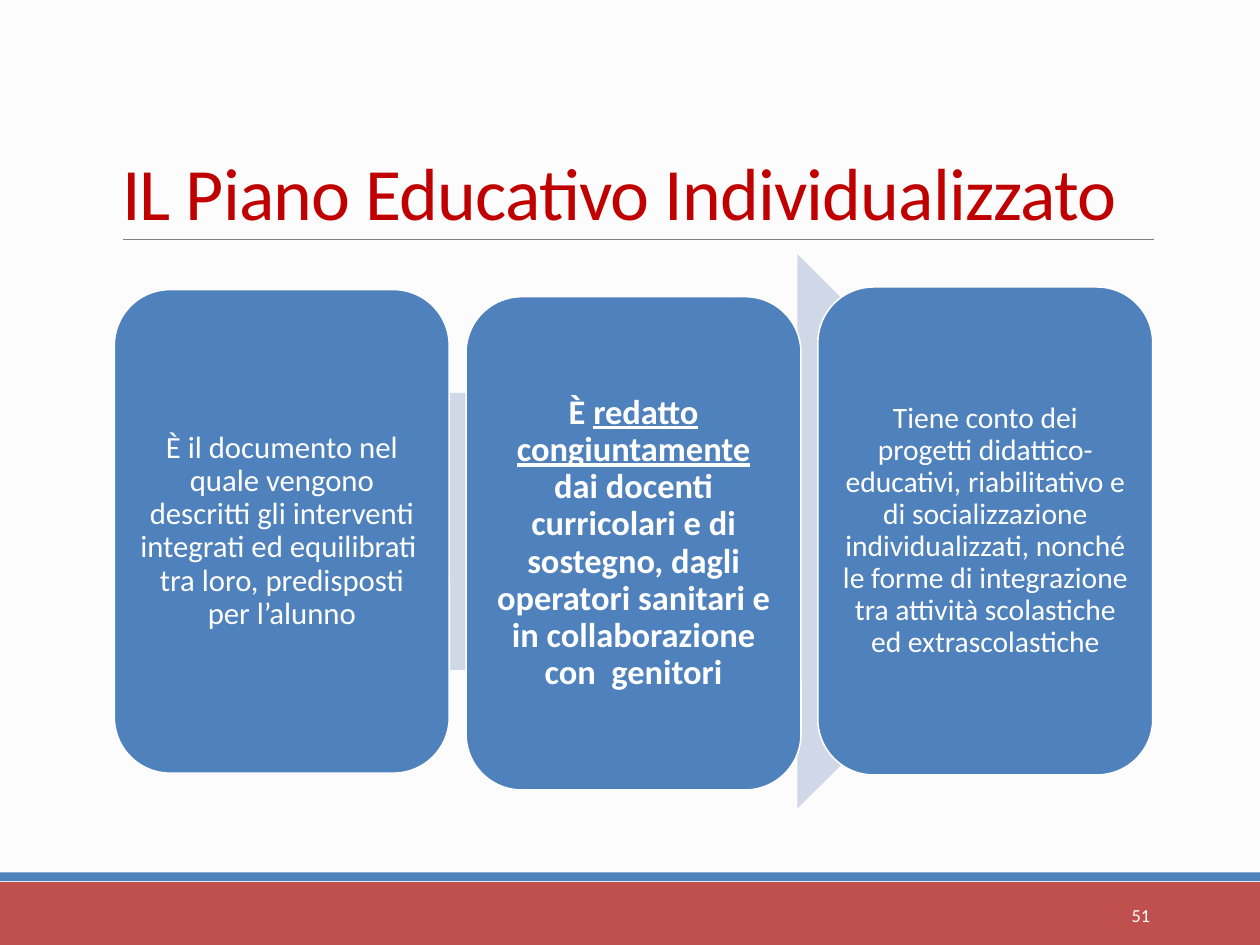
from lxml.etree import SubElement
from pptx import Presentation
from pptx.dml.color import RGBColor
from pptx.enum.shapes import MSO_CONNECTOR as Connector, MSO_SHAPE as Shape
from pptx.enum.text import MSO_ANCHOR as Anchor, PP_ALIGN as Align
from pptx.oxml.ns import qn
from pptx.util import Emu, Pt

EMU_PER_PX = 9144  # 100 px to the inch
WIDTH, HEIGHT = 1422, 1067

RED, BLUE, PALE_BLUE = "C0504D", "4F81BD", "D0D8E8"
TITLE_RED, GREY, WHITE, PAPER = "C00000", "808080", "FFFFFF", "FCFCFC"

CARD_LEFT, CARD_WIDTH, CARD_STEP = 129, 378, 397
# top, height, text inset, font size, bold, runs as (text, underlined)
CARDS = [
    (327, 546, 10, 25, False, [
        ("È il documento nel quale vengono descritti gli interventi integrati "
         "ed equilibrati  tra loro, predisposti per l’alunno", False)]),
    (335, 557, 12, 28, True, [
        ("È ", False),
        ("redatto congiuntamente ", True),
        ("dai docenti curricolari e di sostegno, dagli operatori sanitari "
         "e in collaborazione con  genitori", False)]),
    (324, 551, 10, 24, False, [
        ("Tiene conto dei progetti didattico-educativi, riabilitativo e di "
         "socializzazione individualizzati, nonché le forme di integrazione "
         "tra attività scolastiche ed extrascolastiche", False)]),
]


def px(length):
    return Emu(length * EMU_PER_PX)


def color(hex_code):
    return RGBColor.from_string(hex_code)


class SlideBuilder:
    def __init__(self, slide, font="Calibri"):
        self.slide = slide
        self.font = font

    def background(self, hex_code):
        fill = self.slide.background.fill
        fill.solid()
        fill.fore_color.rgb = color(hex_code)

    def shape(self, kind, left, top, width, height, fill, outline=None):
        shape = self.slide.shapes.add_shape(
            kind, px(left), px(top), px(width), px(height))
        shape.shadow.inherit = False
        shape.fill.solid()
        shape.fill.fore_color.rgb = color(fill)
        if outline:
            shape.line.color.rgb = color(outline)
            shape.line.width = Pt(1.25)
        else:
            shape.line.fill.background()
        return shape

    def rule(self, left, right, y, hex_code):
        rule = self.slide.shapes.add_connector(
            Connector.STRAIGHT, px(left), px(y), px(right), px(y))
        rule.line.color.rgb = color(hex_code)
        rule.line.width = Pt(0.5)
        SubElement(rule._element.spPr, qn("a:effectLst"))

    def text_box(self, left, top, width, height):
        return self.slide.shapes.add_textbox(
            px(left), px(top), px(width), px(height))

    def set_text(self, holder, runs, size, hex_code, align, anchor,
                 bold=False, line_spacing=1.0, tracking=0, inset=None):
        """Fill a shape with one paragraph; tracking is in hundredths of a point."""
        frame = holder.text_frame
        frame.word_wrap = True
        frame.vertical_anchor = anchor
        if inset is not None:
            frame.margin_left = frame.margin_right = px(inset)
            frame.margin_top = frame.margin_bottom = px(inset)
        paragraph = frame.paragraphs[0]
        paragraph.alignment = align
        paragraph.line_spacing = line_spacing
        font = paragraph.font
        font.name, font.size, font.bold = self.font, Pt(size), bold
        font.color.rgb = color(hex_code)
        for text, underlined in runs:
            run = paragraph.add_run()
            run.text = text
            if underlined:
                run.font.underline = True
            if tracking:
                run._r.get_or_add_rPr().set("spc", str(tracking))


def main():
    deck = Presentation()
    deck.slide_width, deck.slide_height = px(WIDTH), px(HEIGHT)
    builder = SlideBuilder(deck.slides.add_slide(deck.slide_layouts[6]))

    builder.background(PAPER)
    builder.shape(Shape.RECTANGLE, 0, 996, WIDTH, 71, RED)
    builder.shape(Shape.RECTANGLE, 0, 985, WIDTH, 10, BLUE)
    builder.rule(139, 1302, 270, GREY)

    title = builder.text_box(128, 45, 1173, 226)
    builder.set_text(title, [("IL Piano Educativo Individualizzato", False)],
                     60, TITLE_RED, Align.LEFT, Anchor.BOTTOM,
                     line_spacing=0.85, tracking=-70)

    builder.shape(Shape.RIGHT_ARROW, 216, 287, 997, 626, PALE_BLUE)
    for index, (top, height, inset, size, bold, runs) in enumerate(CARDS):
        card = builder.shape(Shape.ROUNDED_RECTANGLE,
                             CARD_LEFT + index * CARD_STEP, top,
                             CARD_WIDTH, height, BLUE, WHITE)
        builder.set_text(card, runs, size, WHITE, Align.CENTER, Anchor.MIDDLE,
                         bold=bold, line_spacing=0.9, inset=inset)

    page_number = builder.text_box(1155, 1005, 153, 57)
    builder.set_text(page_number, [("51", False)], 14.9, WHITE,
                     Align.RIGHT, Anchor.MIDDLE)

    deck.save("out.pptx")


if __name__ == "__main__":
    main()
